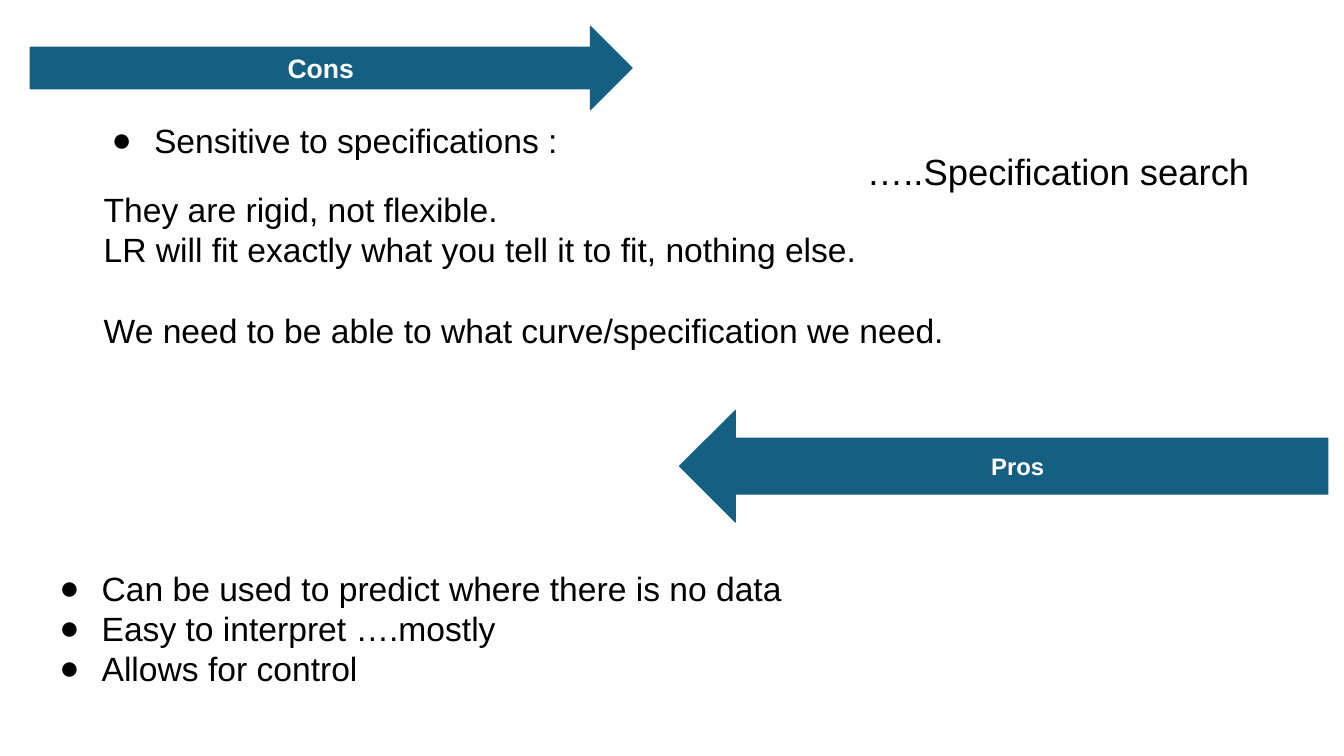
from lxml.etree import SubElement
from pptx import Presentation
from pptx.dml.color import RGBColor
from pptx.enum.shapes import MSO_SHAPE
from pptx.enum.text import MSO_ANCHOR, MSO_AUTO_SIZE, PP_ALIGN
from pptx.oxml.ns import qn
from pptx.util import Inches, Pt

WIDTH, HEIGHT = 13.33, 7.5
FONT = "Arial"
BODY_SIZE, BODY_LINE = 24, 28.8
TEAL = RGBColor(0x15, 0x60, 0x82)
BLACK = RGBColor(0, 0, 0)
WHITE = RGBColor(255, 255, 255)


def inches(box):
    """Convert left, top, width and height to lengths."""
    return [Inches(value) for value in box]


def set_insets(frame):
    """Give a text frame wrapping and equal margins."""
    frame.word_wrap = True
    frame.margin_left = frame.margin_right = Inches(0.1)
    frame.margin_top = frame.margin_bottom = Inches(0.1)


def write(paragraph, wording, size, color, bold=False):
    """Fill a paragraph and format its text."""
    paragraph.text = wording
    for run in paragraph.runs:
        run.font.name = FONT
        run.font.size = Pt(size)
        run.font.bold = bold
        run.font.color.rgb = color


def add_bullet(paragraph):
    """Put a black round bullet with a hanging indent on a paragraph."""
    properties = paragraph._p.get_or_add_pPr()
    properties.set("marL", str(Inches(0.5)))
    properties.set("indent", str(Inches(-0.42)))
    bullet_color = SubElement(properties, qn("a:buClr"))
    SubElement(bullet_color, qn("a:srgbClr"), val=str(BLACK))
    SubElement(properties, qn("a:buFont"), typeface=FONT)
    SubElement(properties, qn("a:buChar"), char="●")


def add_banner(slide, direction, box, heading, size):
    """Draw a block arrow that carries a section heading."""
    arrow = slide.shapes.add_shape(direction, *inches(box))
    arrow.shadow.inherit = False
    arrow.fill.solid()
    arrow.fill.fore_color.rgb = TEAL
    arrow.line.color.rgb = TEAL
    arrow.line.width = Pt(0.75)
    frame = arrow.text_frame
    set_insets(frame)
    frame.vertical_anchor = MSO_ANCHOR.MIDDLE
    frame.paragraphs[0].alignment = PP_ALIGN.CENTER
    write(frame.paragraphs[0], heading, size, WHITE, bold=True)


def add_points(slide, box, points, size=BODY_SIZE, line=BODY_LINE):
    """Write paragraphs given as wording, bullet flag and space before."""
    frame = slide.shapes.add_textbox(*inches(box)).text_frame
    set_insets(frame)
    frame.auto_size = MSO_AUTO_SIZE.SHAPE_TO_FIT_TEXT
    for index, (wording, bulleted, gap) in enumerate(points):
        paragraph = frame.add_paragraph() if index else frame.paragraphs[0]
        write(paragraph, wording, size, BLACK)
        if line:
            paragraph.line_spacing = Pt(line)
        if gap:
            paragraph.space_before = Pt(gap)
        if bulleted:
            add_bullet(paragraph)


def main():
    """Build the slide on the cons and pros of regression."""
    deck = Presentation()
    deck.slide_width, deck.slide_height = Inches(WIDTH), Inches(HEIGHT)
    slide = deck.slides.add_slide(deck.slide_layouts[6])

    cons = [
        ("Sensitive to specifications :", True, 0),
        ("They are rigid, not flexible.", False, 20.5),
        ("LR will fit exactly what you tell it to fit, nothing else.", False, 0),
        ("We need to be able to what curve/specification we need.", False, BODY_LINE),
    ]
    pros = [
        ("Can be used to predict where there is no data", True, 0),
        ("Easy to interpret ….mostly", True, 0),
        ("Allows for control", True, 0),
    ]
    add_points(slide, (0.93, 1.09, 11.48, 2.51), cons)
    add_banner(slide, MSO_SHAPE.RIGHT_ARROW, (0.3, 0.26, 5.97, 0.83), "Cons", 19)
    add_points(slide, (8.5, 1.38, 4.39, 0.64),
               [("…..Specification search", False, 0)], size=26, line=None)
    add_banner(slide, MSO_SHAPE.LEFT_ARROW, (6.74, 4.07, 6.43, 1.11), "Pros", 17)
    add_points(slide, (0.41, 5.53, 12.16, 1.42), pros)
    deck.save("out.pptx")


if __name__ == "__main__":
    main()
